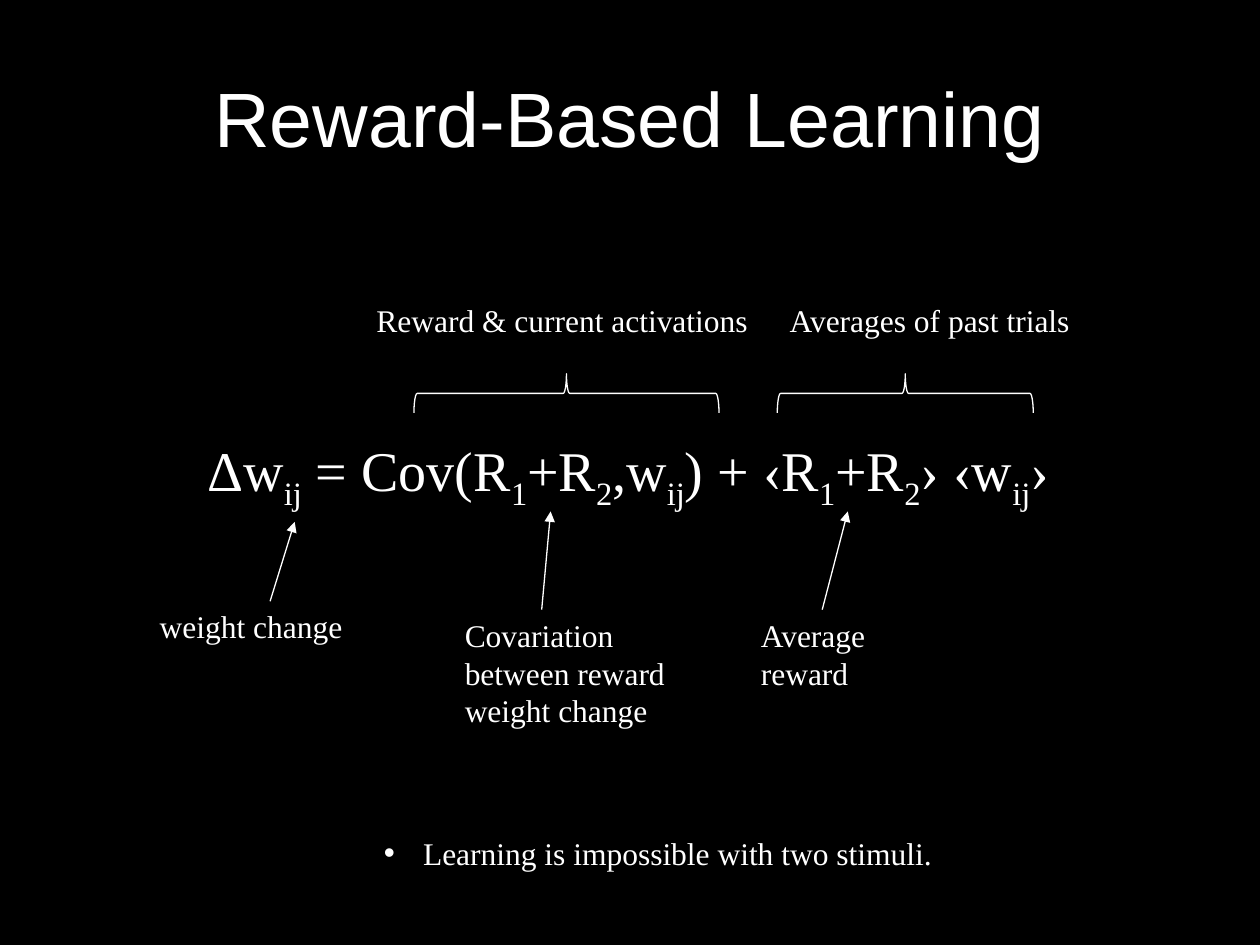
from dataclasses import dataclass

from lxml import etree
from pptx import Presentation
from pptx import util as u
from pptx.dml.color import RGBColor
from pptx.enum import shapes, text
from pptx.oxml import ns


@dataclass(frozen=True)
class Theme:
    ground: RGBColor = RGBColor(0, 0, 0)
    ink: RGBColor = RGBColor(255, 255, 255)
    title_font: str = "Arial"
    body_font: str = "Times New Roman"
    title_size: int = 44
    equation_size: int = 32
    label_size: int = 18
    line_width: float = 0.75


THEME = Theme()
LABEL_HEIGHT = 1.02
BRACE_DEPTH = 0.79
BRACE_MIDDLE = 7.93


def add_box(page, left, top, width, height):
    box = page.shapes.add_textbox(u.Cm(left), u.Cm(top), u.Cm(width), u.Cm(height))
    box.text_frame.word_wrap = True
    return box


def add_span(para, words, size, font=THEME.body_font):
    span = para.add_run()
    span.text = words
    span.font.size = u.Pt(size)
    span.font.name = font
    span.font.color.rgb = THEME.ink
    return span


def add_title(page, words):
    box = add_box(page, 1.27, 0.76, 22.86, 3.18)
    box.text_frame.vertical_anchor = text.MSO_ANCHOR.MIDDLE
    para = box.text_frame.paragraphs[0]
    para.alignment = text.PP_ALIGN.CENTER
    add_span(para, words, THEME.title_size, THEME.title_font)


def add_equation(page, parts):
    """Set the parts in turn on the baseline and as subscripts."""
    box = add_box(page, 3.18, 8.53, 18.97, 3.1)
    box.text_frame.margin_top = u.Cm(0.25)
    para = box.text_frame.paragraphs[0]
    para.alignment = text.PP_ALIGN.CENTER
    for index, part in enumerate(parts):
        span = add_span(para, part, THEME.equation_size)
        if index % 2:
            span.font._element.set("baseline", "-25000")


def add_label(page, words, left, top, width, height=LABEL_HEIGHT, bullet=False):
    box = add_box(page, left, top, width, height)
    box.text_frame.auto_size = text.MSO_AUTO_SIZE.SHAPE_TO_FIT_TEXT
    para = box.text_frame.paragraphs[0]
    if bullet:
        indent = u.Cm(0.79)
        properties = para._p.get_or_add_pPr()
        properties.set("marL", str(indent))
        properties.set("indent", str(-indent))
        etree.SubElement(properties, ns.qn("a:buFont")).set("typeface", "Arial")
        etree.SubElement(properties, ns.qn("a:buChar")).set("char", "•")
    add_span(para, words, THEME.label_size)
    return box


def add_arrow(page, start, end, source=None):
    arrow = page.shapes.add_connector(
        shapes.MSO_CONNECTOR.STRAIGHT, *(u.Cm(value) for value in start + end))
    if source is not None:
        arrow.begin_connect(source, 0)
    arrow.line.color.rgb = THEME.ink
    arrow.line.width = u.Pt(THEME.line_width)
    etree.SubElement(arrow.line._get_or_add_ln(), ns.qn("a:tailEnd")).set("type", "triangle")
    etree.SubElement(arrow._element.spPr, ns.qn("a:effectLst"))


def add_brace(page, center, span):
    """Turn a right brace so that it points up above the equation."""
    brace = page.shapes.add_shape(
        shapes.MSO_SHAPE.RIGHT_BRACE,
        u.Cm(center - BRACE_DEPTH / 2), u.Cm(BRACE_MIDDLE - span / 2),
        u.Cm(BRACE_DEPTH), u.Cm(span))
    brace.rotation = 270
    brace.shadow.inherit = False
    brace.fill.background()
    brace.line.color.rgb = THEME.ink
    brace.line.width = u.Pt(THEME.line_width)


def main():
    deck = Presentation()
    deck.slide_width, deck.slide_height = u.Cm(25.4), u.Cm(19.05)
    page = deck.slides.add_slide(deck.slide_layouts[6])
    page.background.fill.solid()
    page.background.fill.fore_color.rgb = THEME.ground

    # Title and learning rule
    add_title(page, "Reward-Based Learning")
    add_equation(page, ["Δw", "ij", " = Cov(R", "1", "+R", "2", ",w", "ij",
                        ") + ‹R", "1", "+R", "2", "› ‹w", "ij", "›"])

    # Terms named below the rule
    change = add_label(page, "weight change", 2.97, 12.12, 4.95)
    add_label(page, "Covariation between reward weight change", 9.12, 12.29, 5.16, 2.57)
    average = add_label(page, "Average reward", 15.09, 12.29, 2.97, 1.8)
    add_arrow(page, (5.46, 12.12), (5.94, 10.52), change)
    add_arrow(page, (10.92, 12.29), (11.1, 10.31))
    add_arrow(page, (16.56, 12.29), (17.09, 10.31), average)

    # Groups braced above the rule
    add_brace(page, 18.25, 5.16)
    add_label(page, "Averages of past trials", 15.67, 5.94, 7.75)
    add_brace(page, 11.42, 6.15)
    add_label(page, "Reward & current activations", 7.34, 5.94, 8.15)

    # Conclusion
    add_label(page, "Learning is impossible with two stimuli.", 7.49, 16.69, 11.61, bullet=True)

    deck.save("out.pptx")


if __name__ == "__main__":
    main()
